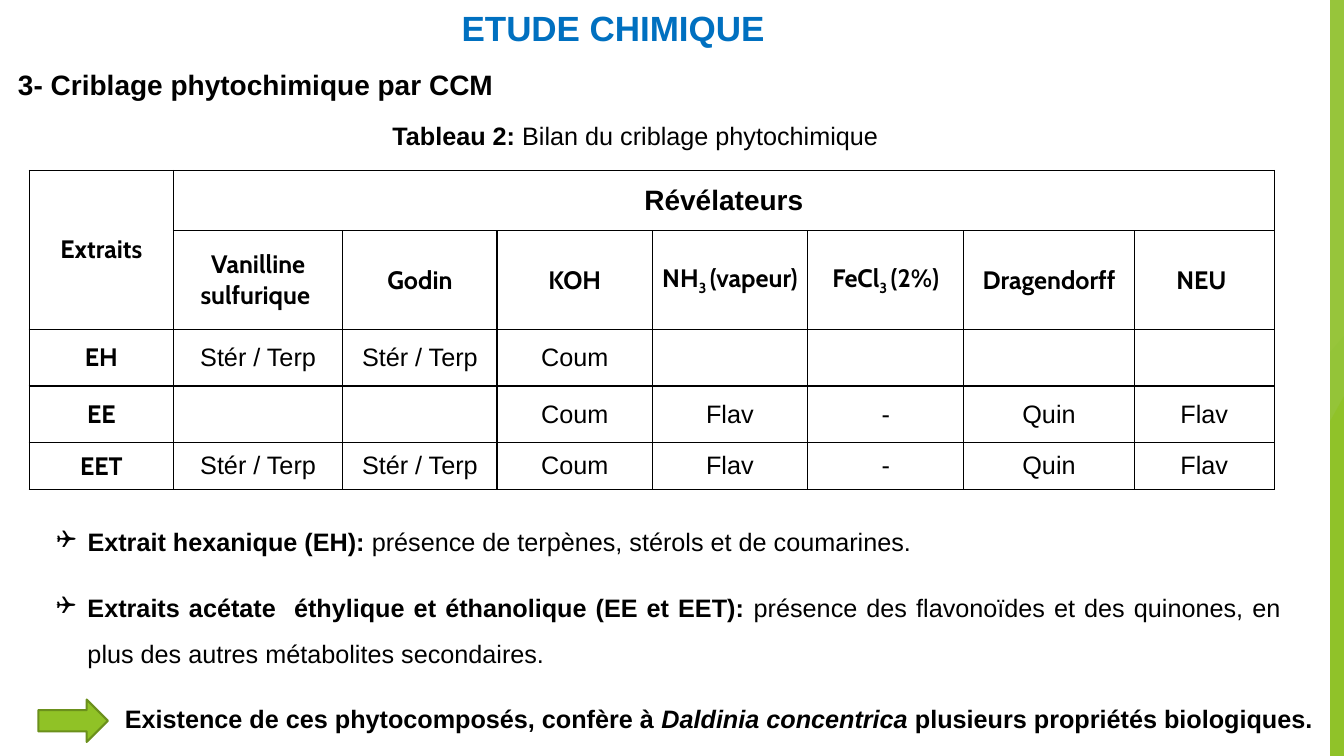
from lxml import etree
from pptx import Presentation
from pptx import util as u
from pptx.dml.color import RGBColor
from pptx.enum import shapes, text
from pptx.oxml.ns import qn

BLACK, GREEN, WHITE = "000000", "90C226", "FFFFFF"
CENTER, JUSTIFY = text.PP_ALIGN.CENTER, text.PP_ALIGN.JUSTIFY
COLUMNS = [1.43, 1.68, 1.53, 1.54, 1.54, 1.55, 1.69, 1.39]
ROWS = [0.6, 0.98, 0.56, 0.56, 0.47]
REAGENTS = [
    [("Vanilline sulfurique ", {})],
    [("Godin", {})],
    [("KOH", {})],
    [("NH", {}), ("3 ", {"sub": True}), ("(vapeur)", {})],
    [("FeCl", {}), ("3 ", {"sub": True}), ("(2%)", {})],
    [("Dragendorff", {})],
    [("NEU ", {})],
]
RESULTS = {
    "EH": ["Stér / Terp", "Stér / Terp", "Coum", "", "", "", ""],
    "EE": ["", "", "Coum", "Flav", "-", "Quin", "Flav"],
    "EET": ["Stér / Terp", "Stér / Terp", "Coum", "Flav", "-", "Quin", "Flav"],
}
# Facets reaching the right edge, back to front: top x or top y, bottom x, colour, opacity.
FACETS = [
    ("band", 12.28, 10.04, GREEN, 30),
    ("band", 10.5, 11.83, GREEN, 20),
    ("triangle", 3.33, 9.77, "54A021", 72),
    ("band", 10.21, 12.91, "3F7819", 70),
    ("band", 13.03, 11.92, "C0E474", 70),
    ("band", 11.96, 13.18, GREEN, 65),
    ("triangle", 3.93, 11.34, GREEN, 80),
]


def rgb(value):
    return RGBColor.from_string(value)


def write(frame, runs, size=18, font="Arial", color=BLACK, bold=False,
          align=None, spacing=None, bullet=None):
    """Fill the first paragraph with (text, options) runs; options: bold, italic, sub."""
    paragraph = frame.paragraphs[0]
    paragraph.alignment = align
    paragraph.line_spacing = spacing
    if bullet:
        properties = paragraph._p.get_or_add_pPr()
        indent = u.Inches(0.31)
        properties.set("marL", str(indent))
        properties.set("indent", str(-indent))
        etree.SubElement(properties, qn("a:buFont")).set("typeface", "Wingdings")
        etree.SubElement(properties, qn("a:buChar")).set("char", bullet)
    for words, options in runs:
        run = paragraph.add_run()
        run.text = words
        run.font.size = u.Pt(size)
        run.font.name = font
        run.font.color.rgb = rgb(color)
        run.font.bold = options.get("bold", bold)
        run.font.italic = options.get("italic", False)
        if options.get("sub"):
            run.font._element.set("baseline", "-25000")


def add_text(slide, box, runs, wrap=True, **style):
    frame = slide.shapes.add_textbox(*map(u.Inches, box)).text_frame
    frame.word_wrap = wrap
    write(frame, runs, **style)


def paint(shape, fill, line=None, opacity=100):
    shape.shadow.inherit = False
    shape.fill.solid()
    shape.fill.fore_color.rgb = rgb(fill)
    if opacity < 100:
        color = shape._element.spPr.find(qn("a:solidFill"))[0]
        etree.SubElement(color, qn("a:alpha"), val=str(opacity * 1000))
    if line:
        shape.line.color.rgb = rgb(line)
        shape.line.width = u.Pt(1.5)
    else:
        shape.line.fill.background()


def add_backdrop(slide, width, height):
    """Layered green facets, showing beside a white panel."""
    ray = slide.shapes.add_connector(
        shapes.MSO_CONNECTOR.STRAIGHT,
        *map(u.Inches, (width, 4.03, 8.12, height)))
    ray.line.color.rgb = rgb("D9D9D9")
    ray.line.width = u.Pt(0.75)
    etree.SubElement(ray._element.spPr, qn("a:effectLst"))
    for kind, start, bottom_x, color, opacity in FACETS:
        if kind == "band":
            corners = [(start, -0.01), (width, -0.01), (width, height), (bottom_x, height)]
            points = [(u.Inches(x), u.Inches(y)) for x, y in corners]
            outline = slide.shapes.build_freeform(*points[0])
            outline.add_line_segments(points[1:])
            facet = outline.convert_to_shape()
        else:
            facet = slide.shapes.add_shape(
                shapes.MSO_SHAPE.ISOSCELES_TRIANGLE,
                *map(u.Inches, (bottom_x, start, width - bottom_x, height - start)))
            facet.adjustments[0] = 1
        paint(facet, color, opacity=opacity)
    panel = slide.shapes.add_shape(shapes.MSO_SHAPE.RECTANGLE, 0, 0,
                                   u.Inches(width - 0.15), u.Inches(height))
    paint(panel, WHITE, WHITE)


def add_headings(slide, left, top):
    add_text(slide, (left + 3.06, top, 5.88, 0.52), [("ETUDE CHIMIQUE", {})],
             size=25, color="0070C0", bold=True, align=CENTER)
    add_text(slide, (left, top + 0.6, 4.95, 0.44),
             [("3- Criblage phytochimique par CCM", {})],
             wrap=False, size=20, bold=True)
    add_text(slide, (left + 2.81, top + 1.12, 6.82, 0.4),
             [("Tableau 2: ", {"bold": True}),
              ("Bilan du criblage phytochimique", {})], align=CENTER)


def style_cell(cell):
    """Clear the fill and draw thin black borders."""
    cell.vertical_anchor = text.MSO_ANCHOR.MIDDLE
    cell.margin_left = cell.margin_right = u.Inches(0.07)
    properties = cell._tc.get_or_add_tcPr()
    for side in ("a:lnL", "a:lnR", "a:lnT", "a:lnB"):
        border = etree.SubElement(properties, qn(side), w=str(u.Pt(1)))
        fill = etree.SubElement(border, qn("a:solidFill"))
        etree.SubElement(fill, qn("a:srgbClr"), val=BLACK)
    cell.fill.background()


def add_screening_table(slide, left, top):
    box = map(u.Inches, (left, top, sum(COLUMNS), sum(ROWS)))
    table = slide.shapes.add_table(len(ROWS), len(COLUMNS), *box).table
    table.first_row = table.horz_banding = False
    for column, width in zip(table.columns, COLUMNS):
        column.width = u.Inches(width)
    for row, height in zip(table.rows, ROWS):
        row.height = u.Inches(height)
    for cell in table.iter_cells():
        style_cell(cell)
    table.cell(0, 0).merge(table.cell(1, 0))
    table.cell(0, 1).merge(table.cell(0, len(COLUMNS) - 1))

    label = {"font": "Cabin", "bold": True, "align": CENTER}
    write(table.cell(0, 0).text_frame, [("Extraits", {})], **label)
    write(table.cell(0, 1).text_frame, [("Révélateurs", {})],
          size=20, bold=True, align=CENTER)
    for column, reagent in enumerate(REAGENTS, 1):
        write(table.cell(1, column).text_frame, reagent, **label)
    for row, (extract, findings) in enumerate(RESULTS.items(), 2):
        write(table.cell(row, 0).text_frame, [(extract, {})], **label)
        for column, finding in enumerate(findings, 1):
            if finding:
                write(table.cell(row, column).text_frame, [(finding, {})], align=CENTER)


def add_findings(slide, left, top):
    add_text(slide, (left, top, 10.39, 0.4),
             [("Extrait hexanique (EH):", {"bold": True}),
              (" présence de terpènes, stérols et de coumarines.", {})], bullet="❑")
    add_text(slide, (left, top + 0.51, 12.34, 1.01),
             [("Extraits acétate  éthylique et éthanolique (EE et EET): ", {"bold": True}),
              ("présence des flavonoïdes et des quinones, en plus des autres "
               "métabolites secondaires.", {})],
             align=JUSTIFY, spacing=1.5, bullet="❑")


def add_conclusion(slide, left, top):
    arrow = slide.shapes.add_shape(shapes.MSO_SHAPE.RIGHT_ARROW,
                                   *map(u.Inches, (left, top, 0.69, 0.42)))
    paint(arrow, GREEN, "6B901C")
    add_text(slide, (left + 0.76, top - 0.01, 11.98, 0.4),
             [("Existence de ces phytocomposés, confère à ", {}),
              ("Daldinia concentrica", {"italic": True}),
              (" plusieurs propriétés biologiques.", {})], bold=True)


def main():
    deck = Presentation()
    deck.slide_width, deck.slide_height = u.Inches(13.33), u.Inches(7.5)
    slide = deck.slides.add_slide(deck.slide_layouts[6])
    slide.background.fill.solid()
    slide.background.fill.fore_color.rgb = rgb(WHITE)
    add_backdrop(slide, 13.33, 7.5)
    add_headings(slide, 0.08, 0.02)
    add_screening_table(slide, 0.29, 1.69)
    add_findings(slide, 0.46, 5.17)
    add_conclusion(slide, 0.38, 6.94)
    deck.save("out.pptx")


if __name__ == "__main__":
    main()
